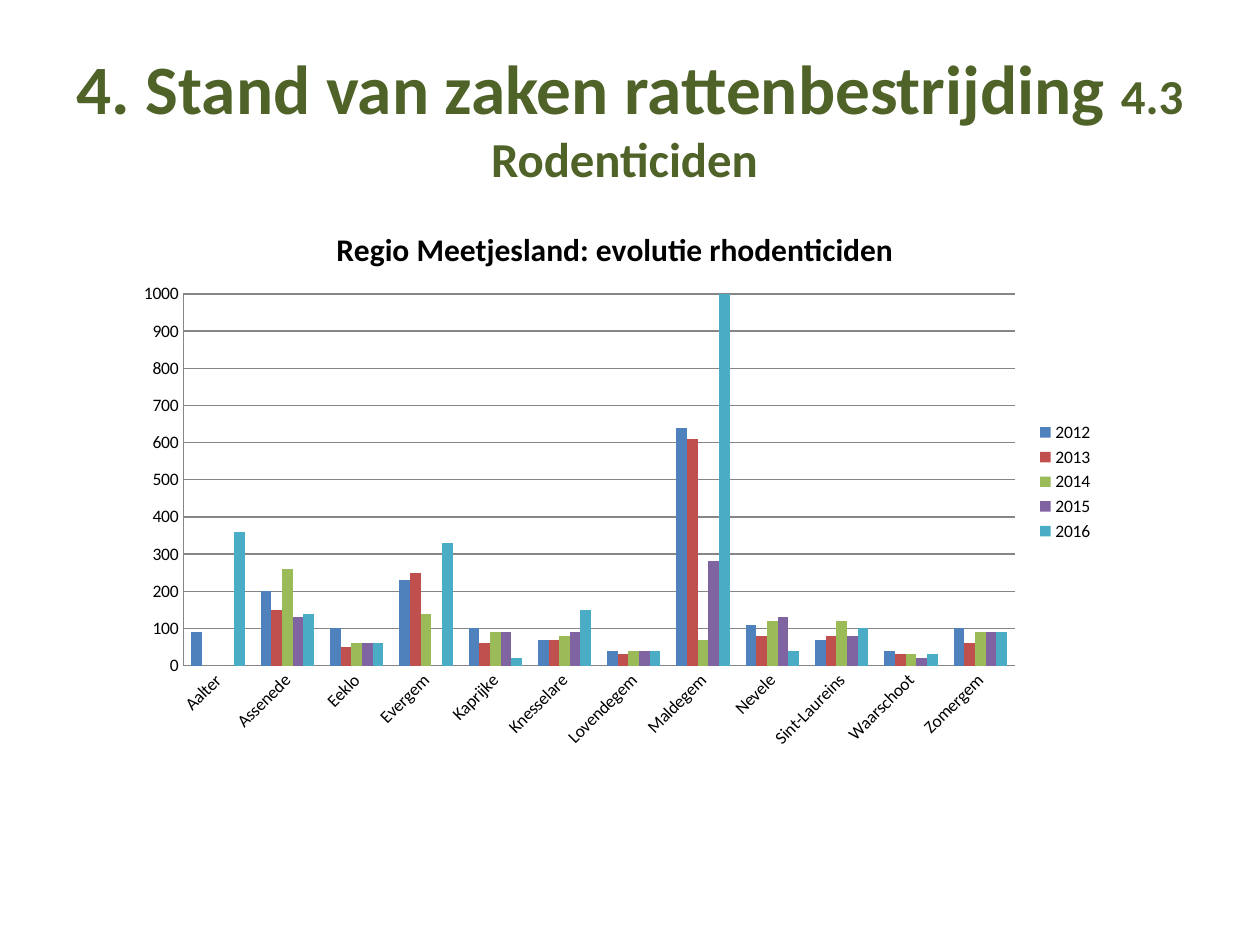
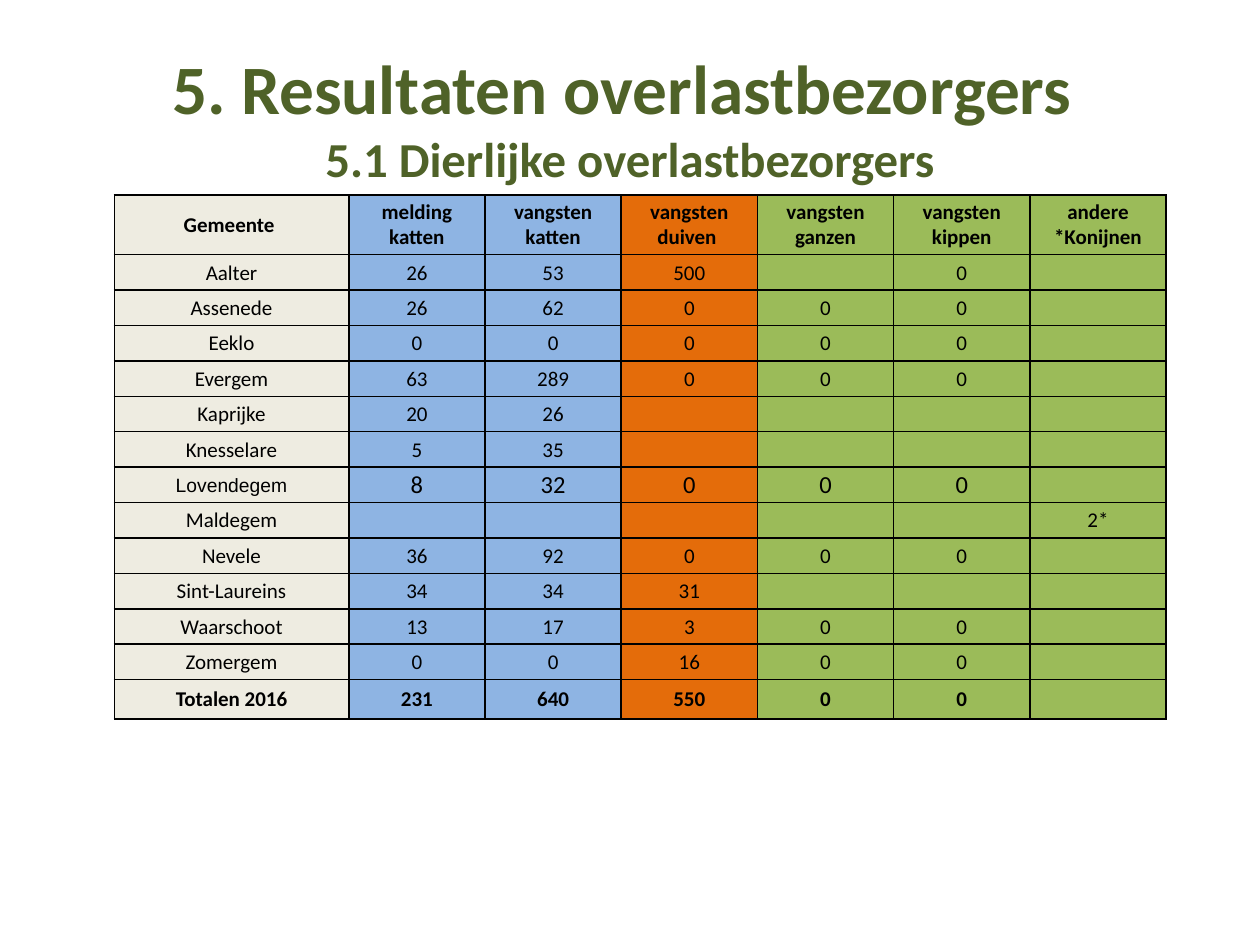
from lxml import etree
from pptx import Presentation
from pptx.chart.data import CategoryChartData
from pptx.dml.color import RGBColor
from pptx.enum.chart import XL_CHART_TYPE, XL_LEGEND_POSITION, XL_TICK_MARK
from pptx.enum.text import MSO_ANCHOR, PP_ALIGN
from pptx.oxml import parse_xml
from pptx.oxml.ns import nsdecls, qn
from pptx.util import Pt

CLUSTERED = XL_CHART_TYPE.COLUMN_CLUSTERED
LEGEND_RIGHT = XL_LEGEND_POSITION.RIGHT
NO_TICK = XL_TICK_MARK.NONE
MIDDLE = MSO_ANCHOR.MIDDLE
CENTER = PP_ALIGN.CENTER
FONT = "Calibri"
COLORS = {
    "title": "4F6228", "text": "000000", "grid": "868686",
    "municipality": "EEECE1", "cats": "8EB4E3", "pigeons": "E46C0A", "others": "9BBB59",
    "2012": "4F81BD", "2013": "C0504D", "2014": "9BBB59", "2015": "8064A2", "2016": "4BACC6",
}
MUNICIPALITIES = ["Aalter", "Assenede", "Eeklo", "Evergem", "Kaprijke", "Knesselare",
                  "Lovendegem", "Maldegem", "Nevele", "Sint-Laureins", "Waarschoot", "Zomergem"]
RODENTICIDES = {
    "2012": [90, 200, 100, 230, 100, 70, 40, 640, 110, 70, 40, 100],
    "2013": [None, 150, 50, 250, 60, 70, 30, 610, 80, 80, 30, 60],
    "2014": [None, 260, 60, 140, 90, 80, 40, 70, 120, 120, 30, 90],
    "2015": [0, 130, 60, 0, 90, 90, 40, 280, 130, 80, 20, 90],
    "2016": [360, 140, 60, 330, 20, 150, 40, 1000, 40, 100, 30, 90],
}
PLOT_LAYOUT = {"x": 0.061, "y": 0.162, "w": 0.846, "h": 0.669}
HEADINGS = ["Gemeente ", "melding katten", "vangsten katten", "vangsten duiven ",
            "vangsten ganzen", "vangsten kippen", "andere *Konijnen"]
COLUMN_FILLS = ["municipality", "cats", "cats", "pigeons", "others", "others", "others"]
CATCHES = [
    ["26", "53", "500", "", "0", ""],
    ["26", "62", "0", "0", "0", ""],
    ["0", "0", "0", "0", "0", ""],
    ["63", "289", "0", "0", "0", ""],
    ["20", "26", "", "", "", ""],
    ["5", "35", "", "", "", ""],
    ["8", "32", "0", "0", "0", ""],
    ["", "", "", "", "", "2*"],
    ["36", "92", "0", "0", "0", ""],
    ["34", "34", "31", "", "", ""],
    ["13", "17", "3", "0", "0", ""],
    ["0", "0", "16", "0", "0", ""],
]
TOTALS = ["Totalen 2016", "231", "640", "550", "0", "0", ""]


def rgb(name):
    """Return the named colour."""
    return RGBColor.from_string(COLORS[name])


def style_font(font, size, color="text", bold=False, name=FONT):
    """Apply typeface, size, colour and weight to a font."""
    font.name, font.size, font.bold = name, Pt(size), bold
    font.color.rgb = rgb(color)


def add_run(paragraph, text, size, **style):
    """Append one styled run to a paragraph."""
    run = paragraph.add_run()
    run.text = text
    style_font(run.font, size, **style)


def add_title(slide, heading, subheading, broken=False):
    """Add the green two-size title, with a forced line break if asked."""
    frame = slide.shapes.add_textbox(Pt(36), Pt(21.6), Pt(648), Pt(90)).text_frame
    frame.word_wrap = True
    frame.vertical_anchor = MIDDLE
    paragraph = frame.paragraphs[0]
    paragraph.alignment = CENTER
    add_run(paragraph, heading, 39.6, color="title", bold=True)
    if broken:
        paragraph.add_line_break()
    add_run(paragraph, subheading, 27.9, color="title", bold=True)


def style_axis(axis):
    """Give an axis grey lines, no ticks and small black labels."""
    axis.major_tick_mark = axis.minor_tick_mark = NO_TICK
    axis.format.line.color.rgb = rgb("grid")
    axis.format.line.width = Pt(0.75)
    style_font(axis.tick_labels.font, 10)


def place_plot(chart):
    """Fix the inner plot area within the chart."""
    plot_area = chart.plots[0]._element.getparent()
    for layout in plot_area.findall(qn("c:layout")):
        plot_area.remove(layout)
    sizes = "".join(f'<c:{key} val="{value}"/>' for key, value in PLOT_LAYOUT.items())
    plot_area.insert(0, parse_xml(
        f'<c:layout {nsdecls("c")}><c:manualLayout><c:layoutTarget val="inner"/>'
        f'<c:xMode val="edge"/><c:yMode val="edge"/>{sizes}</c:manualLayout></c:layout>'))


def add_rodenticide_chart(slide):
    """Add the yearly rodenticide columns per municipality."""
    data = CategoryChartData(number_format="0")
    data.categories = MUNICIPALITIES
    for year, amounts in RODENTICIDES.items():
        data.add_series(year, amounts)
    chart = slide.shapes.add_chart(
        CLUSTERED, Pt(70.6), Pt(116.6), Pt(561.6), Pt(317.5), data).chart
    style_font(chart.font, 10)

    chart.has_title = True
    add_run(chart.chart_title.text_frame.paragraphs[0],
            "Regio Meetjesland: evolutie rhodenticiden", 18, bold=True)
    chart.chart_title.include_in_layout = False
    chart.has_legend = True
    chart.legend.position = LEGEND_RIGHT
    chart.legend.include_in_layout = False
    style_font(chart.legend.font, 10)

    amounts_axis, names_axis = chart.value_axis, chart.category_axis
    style_axis(amounts_axis)
    style_axis(names_axis)
    amounts_axis.minimum_scale, amounts_axis.maximum_scale = 0, 1000
    amounts_axis.major_unit = 100
    amounts_axis.tick_labels.number_format = "0"
    amounts_axis.tick_labels.number_format_is_linked = False
    amounts_axis.major_gridlines.format.line.color.rgb = rgb("grid")
    amounts_axis.major_gridlines.format.line.width = Pt(0.75)
    label_body = names_axis._element.find(qn("c:txPr")).find(qn("a:bodyPr"))
    label_body.set("rot", "-2700000")
    label_body.set("vert", "horz")

    plot = chart.plots[0]
    plot.gap_width, plot.overlap, plot.vary_by_categories = 150, 0, False
    for series in plot.series:
        series.format.fill.solid()
        series.format.fill.fore_color.rgb = rgb(series.name)
    place_plot(chart)


def add_borders(cell):
    """Draw a black one-point line on all four sides of a cell."""
    properties = cell._tc.get_or_add_tcPr()
    for side in ("lnL", "lnR", "lnT", "lnB"):
        line = etree.SubElement(properties, qn(f"a:{side}"), w=str(Pt(1)))
        fill = etree.SubElement(line, qn("a:solidFill"))
        etree.SubElement(fill, qn("a:srgbClr"), val=COLORS["text"])


def fill_cell(cell, text, fill, size=12, bold=False, font=FONT):
    """Set the text, fill, borders and margins of a cell."""
    add_borders(cell)
    cell.fill.solid()
    cell.fill.fore_color.rgb = rgb(fill)
    cell.vertical_anchor = MIDDLE
    cell.margin_left = cell.margin_right = Pt(2.2 if bold else 0.7)
    cell.margin_top = Pt(0 if bold else 0.7)
    cell.margin_bottom = Pt(0)
    paragraph = cell.text_frame.paragraphs[0]
    paragraph.alignment = CENTER
    if text:
        add_run(paragraph, text, size, bold=bold, name=font)
    else:
        etree.SubElement(paragraph._p, qn("a:endParaRPr"), sz=str(size * 100))


def add_catches_table(slide):
    """Add the table of reports and catches per municipality."""
    body = [[name, *counts] for name, counts in zip(MUNICIPALITIES, CATCHES)]
    rows = [HEADINGS, *body, TOTALS]
    table = slide.shapes.add_table(
        len(rows), len(HEADINGS), Pt(65.3), Pt(111.5), Pt(601.1), Pt(299.5)).table
    table.first_row = table.horz_banding = False
    for index, column in enumerate(table.columns):
        column.width = Pt(77.85 if index else 134)
    for index, row in enumerate(table.rows):
        row.height = Pt({0: 34, len(rows) - 1: 22.5}.get(index, 20.25))
    for row_index, texts in enumerate(rows):
        bold = texts in (HEADINGS, TOTALS)
        for column_index, (text, fill) in enumerate(zip(texts, COLUMN_FILLS)):
            size, font = 12, FONT
            if texts[0] == "Lovendegem" and text:
                size, font = (14, FONT) if column_index else (11, "Arial")
            fill_cell(table.cell(row_index, column_index), text, fill, size, bold, font)


def main():
    """Build both slides and save the presentation."""
    presentation = Presentation()
    presentation.slide_width, presentation.slide_height = Pt(720), Pt(540)
    blank = presentation.slide_layouts[6]

    rodenticides = presentation.slides.add_slide(blank)
    add_title(rodenticides, "4. Stand van zaken rattenbestrijding ", "4.3 Rodenticiden ")
    add_rodenticide_chart(rodenticides)

    nuisance_animals = presentation.slides.add_slide(blank)
    add_title(nuisance_animals, "5. Resultaten overlastbezorgers ",
              "5.1 Dierlijke overlastbezorgers", broken=True)
    add_catches_table(nuisance_animals)

    presentation.save("out.pptx")


if __name__ == "__main__":
    main()
